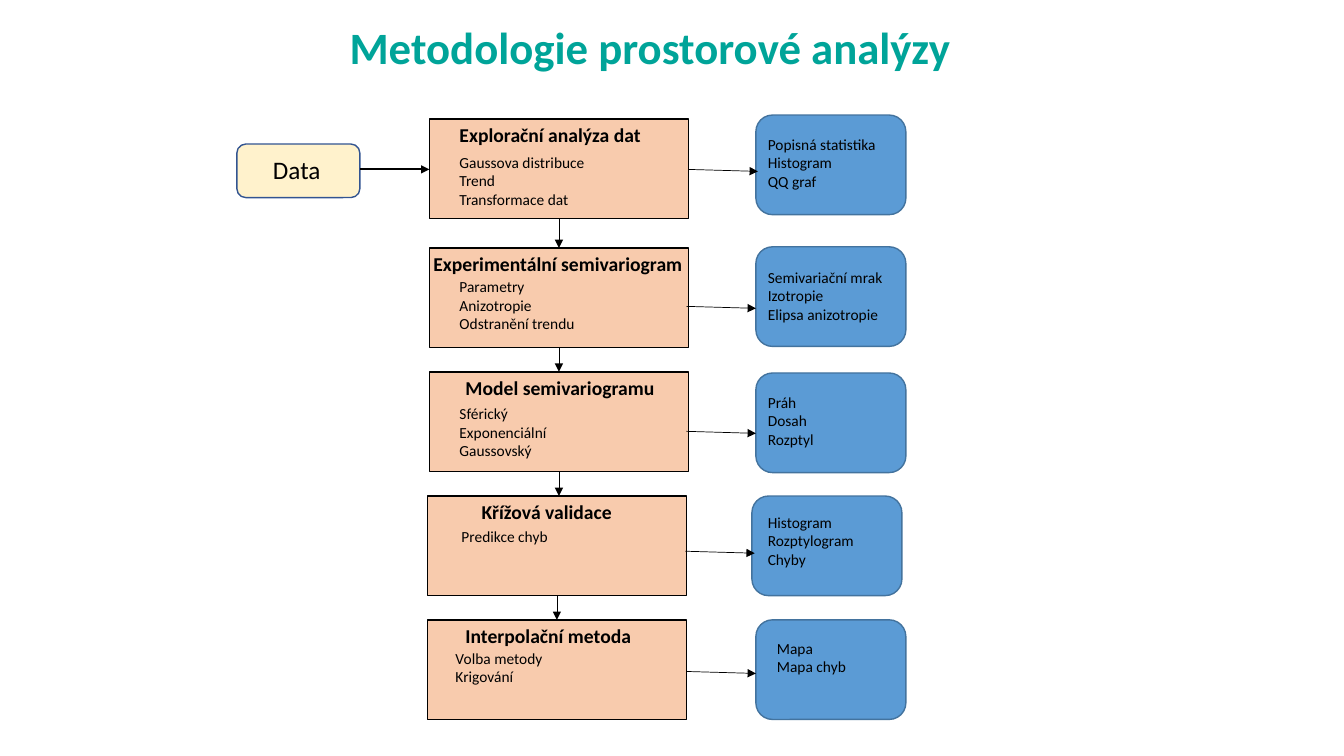
from lxml import etree
from pptx import Presentation
from pptx.dml.color import RGBColor
from pptx.enum.shapes import MSO_CONNECTOR, MSO_SHAPE
from pptx.enum.text import MSO_ANCHOR, MSO_AUTO_SIZE, PP_ALIGN
from pptx.oxml.ns import qn
from pptx.util import Cm, Pt

RECT, ROUND = MSO_SHAPE.RECTANGLE, MSO_SHAPE.ROUNDED_RECTANGLE
STRAIGHT = MSO_CONNECTOR.STRAIGHT
BOTTOM, CENTER = MSO_ANCHOR.BOTTOM, PP_ALIGN.CENTER
NO_FIT = MSO_AUTO_SIZE.NONE

COLORS = {
    "title": "00A499",
    "text": "000000",
    "step": "F8CBAD",
    "data": "FFF2CC",
    "data_line": "325491",
    "output": "5B9BD5",
    "output_line": "43739E",
}
TITLE = {"size": Pt(32), "bold": True}
DATA = {"size": Pt(18), "bold": False}
HEADING = {"size": Pt(14), "bold": True}
ITEM = {"size": Pt(11), "bold": False}

STEP_W, OUTPUT_W, BOX_H = 6.53, 3.78, 2.51
ARROW_W, ARROW_DROP = 1.75, 0.05

STEPS = [
    {"box": (10.82, 3.0), "heading": ("Explorační analýza dat", 11.33),
     "items": (["Gaussova distribuce", "Trend", "Transformace dat"], 11.33, 3.73),
     "output": (19.05, 2.9), "arrow": (17.35, 4.27),
     "results": (["Popisná statistika", "Histogram", "QQ graf"], 19.1, 3.28)},
    {"box": (10.82, 6.25), "heading": ("Experimentální semivariogram", 10.67),
     "items": (["Parametry", "Anizotropie", "Odstranění trendu"], 11.33, 6.86),
     "output": (19.05, 6.22), "arrow": (17.3, 7.72),
     "results": (["Semivariační mrak", "Izotropie", "Elipsa anizotropie"], 19.1, 6.63)},
    {"box": (10.82, 9.37), "heading": ("Model semivariogramu", 11.48),
     "items": (["Sférický", "Exponenciální", "Gaussovský"], 11.33, 10.06),
     "output": (19.05, 9.4), "arrow": (17.3, 10.87),
     "results": (["Práh", "Dosah", "Rozptyl"], 19.1, 9.78)},
    {"box": (10.77, 12.5), "heading": ("Křížová validace", 11.89),
     "items": (["Predikce chyb"], 11.38, 13.16),
     "output": (18.95, 12.5), "arrow": (17.27, 13.89),
     "results": (["Histogram", "Rozptylogram", "Chyby"], 19.1, 12.8)},
    {"box": (10.77, 15.62), "heading": ("Interpolační metoda", 11.48),
     "items": (["Volba metody", "Krigování"], 11.23, 16.23),
     "output": (19.05, 15.62), "arrow": (17.3, 16.92),
     "results": (["Mapa", "Mapa chyb"], 19.33, 15.98)},
]


def rgb(name):
    return RGBColor.from_string(COLORS[name])


def format_run(r, fmt, color="text"):
    for name, value in {"name": "Calibri", **fmt}.items():
        setattr(r.font, name, value)
    r.font.color.rgb = rgb(color)


def add_title(s, text):
    sp = s.shapes.title
    for name, value in {"left": 0, "top": 0, "width": Cm(32.77), "height": Cm(2.0)}.items():
        setattr(sp, name, value)
    tf = sp.text_frame
    tf.auto_size = NO_FIT
    tf.vertical_anchor = BOTTOM
    p = tf.paragraphs[0]
    p.alignment, p.line_spacing = CENTER, 0.9
    r = p.add_run()
    r.text = text
    format_run(r, TITLE, "title")


def add_box(s, kind, x, y, w, h, fill, line):
    sp = s.shapes.add_shape(kind, Cm(x), Cm(y), Cm(w), Cm(h))
    sp.shadow.inherit = False
    sp.fill.solid()
    sp.fill.fore_color.rgb = rgb(fill)
    sp.line.color.rgb = rgb(line)
    sp.line.width = Pt(1)


def add_text(s, lines, x, y, w, h, fmt):
    tf = s.shapes.add_textbox(Cm(x), Cm(y), Cm(w), Cm(h)).text_frame
    tf.word_wrap = True
    for i, line in enumerate(lines):
        p = tf.add_paragraph() if i else tf.paragraphs[0]
        r = p.add_run()
        r.text = line
        format_run(r, fmt)


def add_items(s, lines, x, y):
    add_text(s, lines, x, y, 5.61, 0.26 + 0.47 * len(lines), ITEM)


def add_arrow(s, x1, y1, x2, y2, width=0.5):
    cxn = s.shapes.add_connector(STRAIGHT, Cm(x1), Cm(y1), Cm(x2), Cm(y2))
    cxn.line.color.rgb = rgb("text")
    cxn.line.width = Pt(width)
    etree.SubElement(cxn.line._get_or_add_ln(), qn("a:tailEnd"), type="triangle")
    etree.SubElement(cxn._element.spPr, qn("a:effectLst"))


def add_step(s, step):
    x, y = step["box"]
    heading, heading_x = step["heading"]
    add_box(s, RECT, x, y, STEP_W, BOX_H, "step", "text")
    add_text(s, [heading], heading_x, y - 0.03, 6.81, 0.86, HEADING)
    add_items(s, *step["items"])
    add_box(s, ROUND, *step["output"], OUTPUT_W, BOX_H, "output", "output_line")
    add_items(s, *step["results"])
    x, y = step["arrow"]
    add_arrow(s, x, y, x + ARROW_W, y + ARROW_DROP)


def main():
    prs = Presentation()
    prs.slide_width, prs.slide_height = Cm(33.87), Cm(19.05)
    s = prs.slides.add_slide(prs.slide_layouts[5])
    add_title(s, "Metodologie prostorové analýzy")
    add_box(s, ROUND, 5.97, 3.63, 3.1, 1.35, "data", "data_line")
    add_text(s, ["Data"], 6.63, 3.76, 2.41, 1.02, DATA)
    for step in STEPS:
        add_step(s, step)
    add_arrow(s, 9.07, 4.27, 10.82, 4.27, 1.5)
    for upper, lower in zip(STEPS, STEPS[1:]):
        x, y = upper["box"]
        middle = x + STEP_W / 2
        add_arrow(s, middle, y + BOX_H, middle, lower["box"][1])
    prs.save("out.pptx")


if __name__ == "__main__":
    main()
